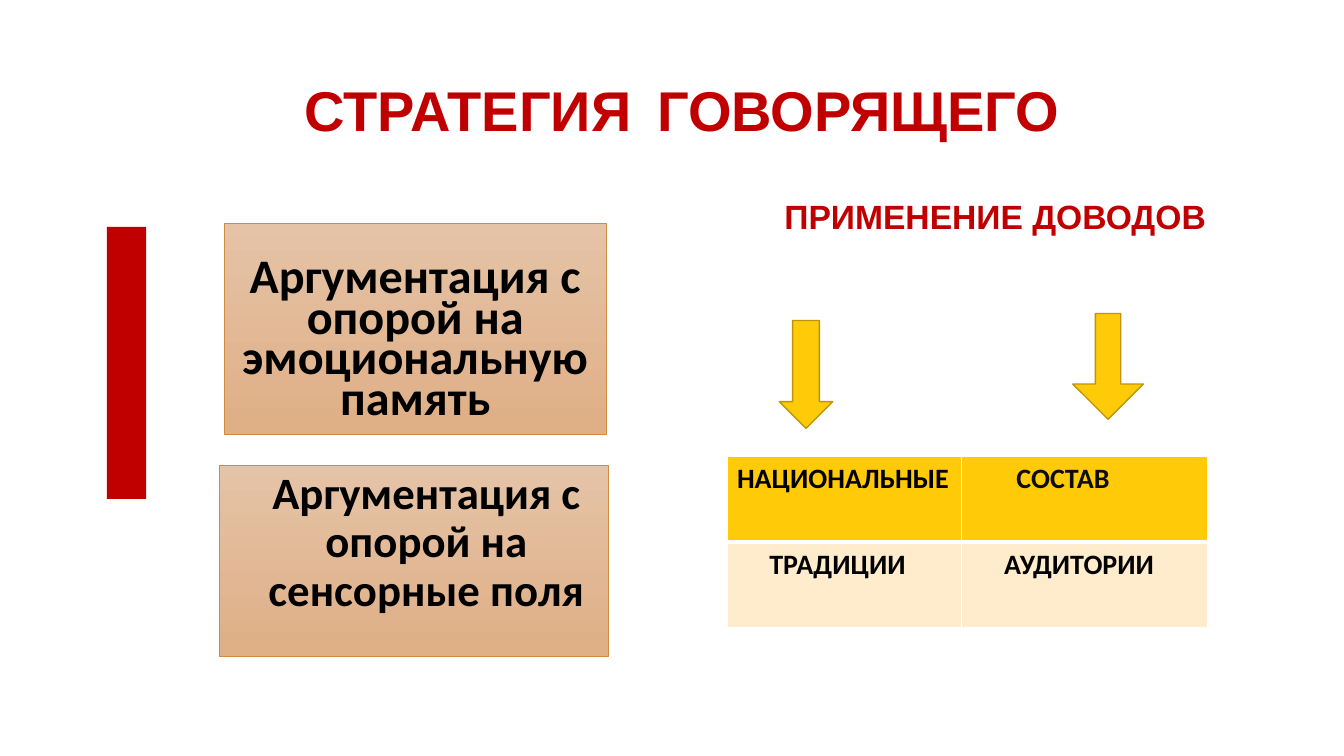
from pptx import Presentation
from pptx.dml.color import RGBColor
from pptx.enum.shapes import MSO_SHAPE
from pptx.enum.text import MSO_ANCHOR, MSO_AUTO_SIZE, PP_ALIGN
from pptx.oxml.ns import qn
from pptx.util import Inches, Pt
from lxml import etree

LEFT, CENTER = PP_ALIGN.LEFT, PP_ALIGN.CENTER
TOP, MIDDLE, BOTTOM = MSO_ANCHOR.TOP, MSO_ANCHOR.MIDDLE, MSO_ANCHOR.BOTTOM
RECTANGLE, DOWN_ARROW = MSO_SHAPE.RECTANGLE, MSO_SHAPE.DOWN_ARROW
NO_AUTOFIT = MSO_AUTO_SIZE.NONE
COMPARISON_LAYOUT = 4

COLORS = {
    "red": "C00000", "black": "000000", "soft_black": "0D0D0D", "white": "FFFFFF",
    "gold": "FFCA08", "gold_line": "BD9506", "cream": "FFECCC",
    "tan_top": "E5C3A7", "tan_bottom": "DFAF86", "tan_line": "CE8D3E",
}


def rgb(name):
    return RGBColor.from_string(COLORS[name])


def set_font(paragraph, name, size, color):
    for key, value in {"name": name, "size": Pt(size), "bold": True}.items():
        setattr(paragraph.font, key, value)
    paragraph.font.color.rgb = rgb(color)


def place(shape, left, top, width, height):
    box = {"left": left, "top": top, "width": width, "height": height}
    for key, value in box.items():
        setattr(shape, key, Inches(value))


def write_placeholder(shape, box, text, font, align=LEFT, anchor=TOP, spacing=0.9,
                      margin_left=0, first_indent=0, tab=None,
                      inset_top=0.05, inset_bottom=0.05):
    """Move a placeholder and give it one formatted paragraph without a bullet."""
    place(shape, *box)
    frame = shape.text_frame
    frame_format = {
        "word_wrap": True, "auto_size": NO_AUTOFIT, "vertical_anchor": anchor,
        "margin_left": Inches(0.1), "margin_right": Inches(0.1),
        "margin_top": Inches(inset_top), "margin_bottom": Inches(inset_bottom),
    }
    for key, value in frame_format.items():
        setattr(frame, key, value)
    frame.text = text
    paragraph = frame.paragraphs[0]
    for key, value in {"alignment": align, "line_spacing": spacing,
                       "space_before": Pt(0), "space_after": Pt(0)}.items():
        setattr(paragraph, key, value)
    properties = paragraph._p.get_or_add_pPr()
    properties.set("marL", str(Inches(margin_left)))
    properties.set("indent", str(Inches(first_indent)))
    etree.SubElement(properties, qn("a:buNone"))
    if tab:
        tabs = etree.SubElement(properties, qn("a:tabLst"))
        etree.SubElement(tabs, qn("a:tab"), pos=str(Inches(tab)), algn="l")
    set_font(paragraph, *font)


def fill_tan(shape):
    shape.fill.gradient()
    shape.fill.gradient_angle = 270
    for stop, color in zip(shape.fill.gradient_stops, ("tan_top", "tan_bottom")):
        stop.color.rgb = rgb(color)
    shape.line.color.rgb = rgb("tan_line")
    shape.line.width = Pt(0.5)


def add_block(slide, kind, box, fill, line=None):
    shape = slide.shapes.add_shape(kind, *map(Inches, box))
    shape.shadow.inherit = False
    shape.fill.solid()
    shape.fill.fore_color.rgb = rgb(fill)
    if line:
        shape.line.color.rgb = rgb(line)
        shape.line.width = Pt(1)
    else:
        shape.line.fill.background()
    return shape


def set_borders(cell, bottom_width):
    properties = cell._tc.get_or_add_tcPr()
    widths = {"lnL": 1, "lnR": 1, "lnT": 1, "lnB": bottom_width}
    for side, width in widths.items():
        line = etree.SubElement(properties, qn(f"a:{side}"), w=str(Pt(width)))
        solid = etree.SubElement(line, qn("a:solidFill"))
        etree.SubElement(solid, qn("a:srgbClr"), val=COLORS["white"])


def add_audience_table(slide):
    # Each cell: text, left margin, text colour
    rows = [
        [("НАЦИОНАЛЬНЫЕ", 0.1, "black"), ("СОСТАВ", 0.54, "soft_black")],
        [("ТРАДИЦИИ", 0.42, "black"), ("АУДИТОРИИ", 0.42, "black")],
    ]
    row_styles = [("gold", 3), ("cream", 1)]
    frame = slide.shapes.add_table(2, 2, *map(Inches, (7.21, 4.53, 4.77, 1.7)))
    table = frame.table
    for column, width in zip(table.columns, (2.33, 2.44)):
        column.width = Inches(width)
    for row_index, (row, (fill, bottom_width)) in enumerate(zip(rows, row_styles)):
        table.rows[row_index].height = Inches(0.85)
        for column_index, (text, margin, color) in enumerate(row):
            cell = table.cell(row_index, column_index)
            set_borders(cell, bottom_width)
            cell.fill.solid()
            cell.fill.fore_color.rgb = rgb(fill)
            cell.margin_left = Inches(margin)
            cell.text = text
            set_font(cell.text_frame.paragraphs[0], "Calibri", 20, color)


def main():
    presentation = Presentation()
    presentation.slide_width = Inches(13.33)
    presentation.slide_height = Inches(7.5)
    slide = presentation.slides.add_slide(presentation.slide_layouts[COMPARISON_LAYOUT])
    title, unused, memory_box, heading, senses_box = slide.placeholders
    unused.element.getparent().remove(unused.element)

    # Title and right heading
    write_placeholder(title, (0.92, 0.4, 11.5, 1.45), "СТРАТЕГИЯ\tГОВОРЯЩЕГО",
                      ("Arial", 40, "red"), anchor=MIDDLE, first_indent=2, tab=6.32)
    write_placeholder(heading, (6.75, 1.84, 5.67, 0.9), "ПРИМЕНЕНИЕ ДОВОДОВ",
                      ("Arial", 24, "red"), first_indent=0.93, inset_top=0.15)

    # Argument boxes
    write_placeholder(memory_box, (2.23, 2.22, 3.78, 2.09),
                      "Аргументация с опорой на эмоциональную память",
                      ("Calibri", 34.4, "black"), CENTER, BOTTOM, 0.7, inset_bottom=0.11)
    write_placeholder(senses_box, (2.18, 4.62, 3.85, 1.89),
                      "Аргументация с опорой на сенсорные поля",
                      ("Calibri", 32, "black"), CENTER, margin_left=0.25)
    for box in (memory_box, senses_box):
        fill_tan(box)

    # Table, red bar and arrows
    add_audience_table(slide)
    add_block(slide, RECTANGLE, (1.06, 2.25, 0.39, 2.7), "red")
    add_block(slide, DOWN_ARROW, (7.73, 3.18, 0.53, 1.07), "gold", "gold_line")
    wide_arrow = add_block(slide, DOWN_ARROW, (10.64, 3.11, 0.7, 1.05), "gold", "gold_line")
    wide_arrow.adjustments[0] = 0.36

    presentation.save("out.pptx")


if __name__ == "__main__":
    main()
